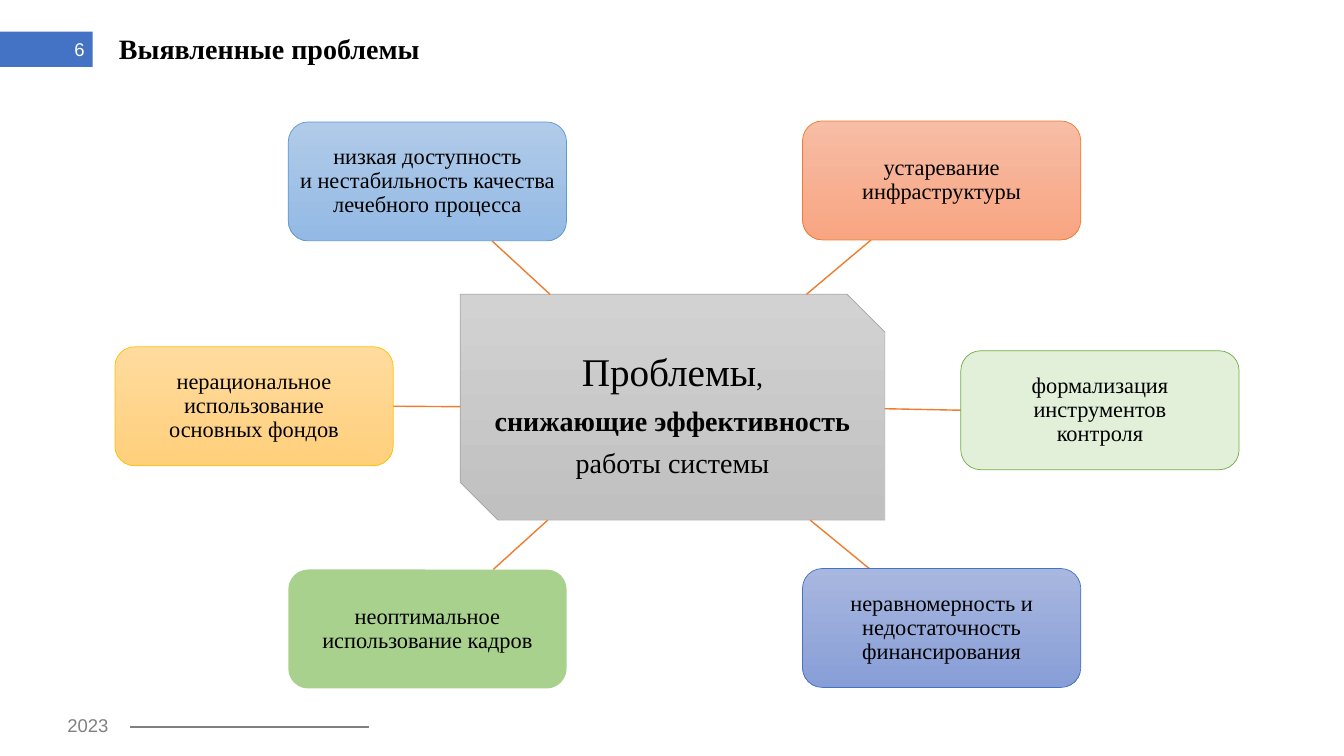
from lxml import etree
from pptx import Presentation
from pptx.dml.color import RGBColor
from pptx.enum.shapes import MSO_CONNECTOR, MSO_SHAPE
from pptx.enum.text import MSO_ANCHOR, PP_ALIGN
from pptx.oxml.ns import qn
from pptx.util import Inches, Pt

RECT = MSO_SHAPE.RECTANGLE
ROUND = MSO_SHAPE.ROUNDED_RECTANGLE
ALTERNATE = MSO_SHAPE.FLOWCHART_ALTERNATE_PROCESS
SNIPPED = MSO_SHAPE.SNIP_2_DIAG_RECTANGLE
STRAIGHT = MSO_CONNECTOR.STRAIGHT
MIDDLE = MSO_ANCHOR.MIDDLE
LEFT, CENTER, RIGHT = PP_ALIGN.LEFT, PP_ALIGN.CENTER, PP_ALIGN.RIGHT
SIDE_LEFT, SIDE_RIGHT = 1, 3

SERIF, SANS = "Times New Roman", "Arial"
BLACK = RGBColor(0x00, 0x00, 0x00)
WHITE = RGBColor(0xFF, 0xFF, 0xFF)
BLUE = RGBColor(0x44, 0x72, 0xC4)
ORANGE = RGBColor(0xED, 0x7D, 0x31)
GOLD = RGBColor(0xFF, 0xC0, 0x00)
GREEN = RGBColor(0x70, 0xAD, 0x47)
SKY = RGBColor(0x5B, 0x9B, 0xD5)
SILVER = RGBColor(0xA5, 0xA5, 0xA5)
GREY = RGBColor(0x80, 0x80, 0x80)
HUB_FILL = (RGBColor(0xD2, 0xD2, 0xD2), RGBColor(0xC0, 0xC0, 0xC0))
ORANGE_FILL = (RGBColor(0xF7, 0xBD, 0xA5), RGBColor(0xF8, 0xA5, 0x82))
PALE_GREEN_FILL = (RGBColor(0xE2, 0xF0, 0xD9),)
BLUE_FILL = (RGBColor(0xA8, 0xB7, 0xDF), RGBColor(0x88, 0x9E, 0xD7))
GREEN_FILL = (RGBColor(0xA9, 0xD1, 0x8E),)
GOLD_FILL = (RGBColor(0xFF, 0xDB, 0x9E), RGBColor(0xFF, 0xD0, 0x7C))
SKY_FILL = (RGBColor(0xB1, 0xCB, 0xE9), RGBColor(0x93, 0xB9, 0xE4))

SLIDE_W, SLIDE_H = 13.33, 7.5
HUB_CENTER, HUB_SIZE = (6.67, 4.04), (4.21, 2.24)
BOX_SIZE = (2.76, 1.18)
# Column centres: outer left, inner left, inner right, outer right
COLS = (2.52, 4.24, 9.34, 10.91)

# Column, row centre, preset, fill, outline, text
PROBLEMS = [
    (2, 1.79, ROUND, ORANGE_FILL, ORANGE, "устаревание инфраструктуры"),
    (3, 4.07, ROUND, PALE_GREEN_FILL, GREEN,
     "формализация инструментов\vконтроля"),
    (2, 6.23, ROUND, BLUE_FILL, BLUE,
     "неравномерность и недостаточность финансирования"),
    (1, 6.24, ROUND, GREEN_FILL, None, "неоптимальное использование кадров"),
    (0, 4.03, ALTERNATE, GOLD_FILL, GOLD,
     "нерациональное использование\vосновных фондов"),
    (1, 1.8, ROUND, SKY_FILL, SKY,
     "низкая доступность\vи нестабильность качества лечебного процесса"),
]


def write(shape, runs, font=SERIF, color=BLACK, align=LEFT, spacing=1.0,
          after=0, margins=(0, 0, 0, 0)):
    """Fill the shape's text frame; runs are (text, size, bold)."""
    tf = shape.text_frame
    tf.word_wrap = True
    tf.vertical_anchor = MIDDLE
    tf.margin_left, tf.margin_top, tf.margin_right, tf.margin_bottom = (
        Inches(m) for m in margins)
    p = tf.paragraphs[0]
    p.alignment, p.line_spacing, p.space_after = align, spacing, Pt(after)
    for text, size, bold in runs:
        for i, part in enumerate(text.split("\v")):
            if i:
                p.add_line_break()
            if part:
                r = p.add_run()
                r.text = part
                r.font.name, r.font.size, r.font.bold = font, Pt(size), bold
                r.font.color.rgb = color


def add_text(s, x, y, w, h, runs, **fmt):
    write(s.shapes.add_textbox(Inches(x), Inches(y), Inches(w), Inches(h)),
          runs, **fmt)


def add_panel(s, preset, center, size, fill, outline=None):
    """Add a shape about its centre; two fill colours make a gradient."""
    (cx, cy), (w, h) = center, size
    sp = s.shapes.add_shape(preset, Inches(cx - w / 2), Inches(cy - h / 2),
                            Inches(w), Inches(h))
    sp.shadow.inherit = False
    if len(fill) == 1:
        sp.fill.solid()
        sp.fill.fore_color.rgb = fill[0]
    else:
        sp.fill.gradient()
        sp.fill.gradient_angle = 270
        for stop, color, at in zip(sp.fill.gradient_stops, fill, (0, 1)):
            stop.color.rgb = color
            stop.position = at
    if outline is None:
        sp.line.fill.background()
    else:
        sp.line.color.rgb = outline
        sp.line.width = Pt(0.5)
    return sp


def add_line(s, start, end, color, width):
    line = s.shapes.add_connector(
        STRAIGHT, *(Inches(v) for v in (*start, *end)))
    line.line.color.rgb = color
    line.line.width = Pt(width)
    etree.SubElement(line._element.spPr, qn("a:effectLst"))
    return line


def edge_point(center, size, target):
    """Point where the ray from center to target leaves the rectangle."""
    dx, dy = target[0] - center[0], target[1] - center[1]
    t = min(size[0] / 2 / abs(dx), size[1] / 2 / max(abs(dy), 0.001))
    return center[0] + dx * t, center[1] + dy * t


def add_problem(s, col, row, preset, fill, outline, text):
    center = (COLS[col], row)
    spoke = add_line(s, edge_point(HUB_CENTER, HUB_SIZE, center),
                     edge_point(center, BOX_SIZE, HUB_CENTER), ORANGE, 1)
    box = add_panel(s, preset, center, BOX_SIZE, fill, outline)
    write(box, [(text, 16, False)], align=CENTER, spacing=0.9,
          margins=(0.04,) * 4)
    if col == 0:
        spoke.end_connect(box, SIDE_RIGHT)
    elif col == 3:
        spoke.end_connect(box, SIDE_LEFT)


def add_frame(s):
    """Page number, title and footer."""
    tab = add_panel(s, RECT, (0.46, 0.49), (0.92, 0.35), (BLUE,))
    write(tab, [("6", 13.2, False)], font=SANS, color=WHITE, align=RIGHT,
          margins=(0.09, 0, 0.08, 0))
    add_text(s, 0.98, 0.27, 10.2, 0.47, [("Выявленные проблемы", 20, True)],
             spacing=0.9, margins=(0.2, 0, 0, 0))
    add_text(s, 0.57, 7.03, 0.63, 0.32, [("2023", 13.2, False)], font=SANS,
             color=GREY, margins=(0.1, 0.05, 0, 0.05))
    add_line(s, (1.29, 7.21), (3.66, 7.21), GREY, 1.5)


def add_hub(s):
    hub = add_panel(s, SNIPPED, HUB_CENTER, HUB_SIZE, HUB_FILL, SILVER)
    write(hub, [("Проблемы", 28, False), (",\v", 20, False),
                ("снижающие эффективность ", 20, True),
                ("работы системы", 20, False)],
          align=CENTER, spacing=1.25, after=6, margins=(0.08,) * 4)


def main():
    prs = Presentation()
    prs.slide_width, prs.slide_height = Inches(SLIDE_W), Inches(SLIDE_H)
    s = prs.slides.add_slide(prs.slide_layouts[6])
    add_frame(s)
    add_hub(s)
    for problem in PROBLEMS:
        add_problem(s, *problem)
    prs.save("out.pptx")


if __name__ == "__main__":
    main()
